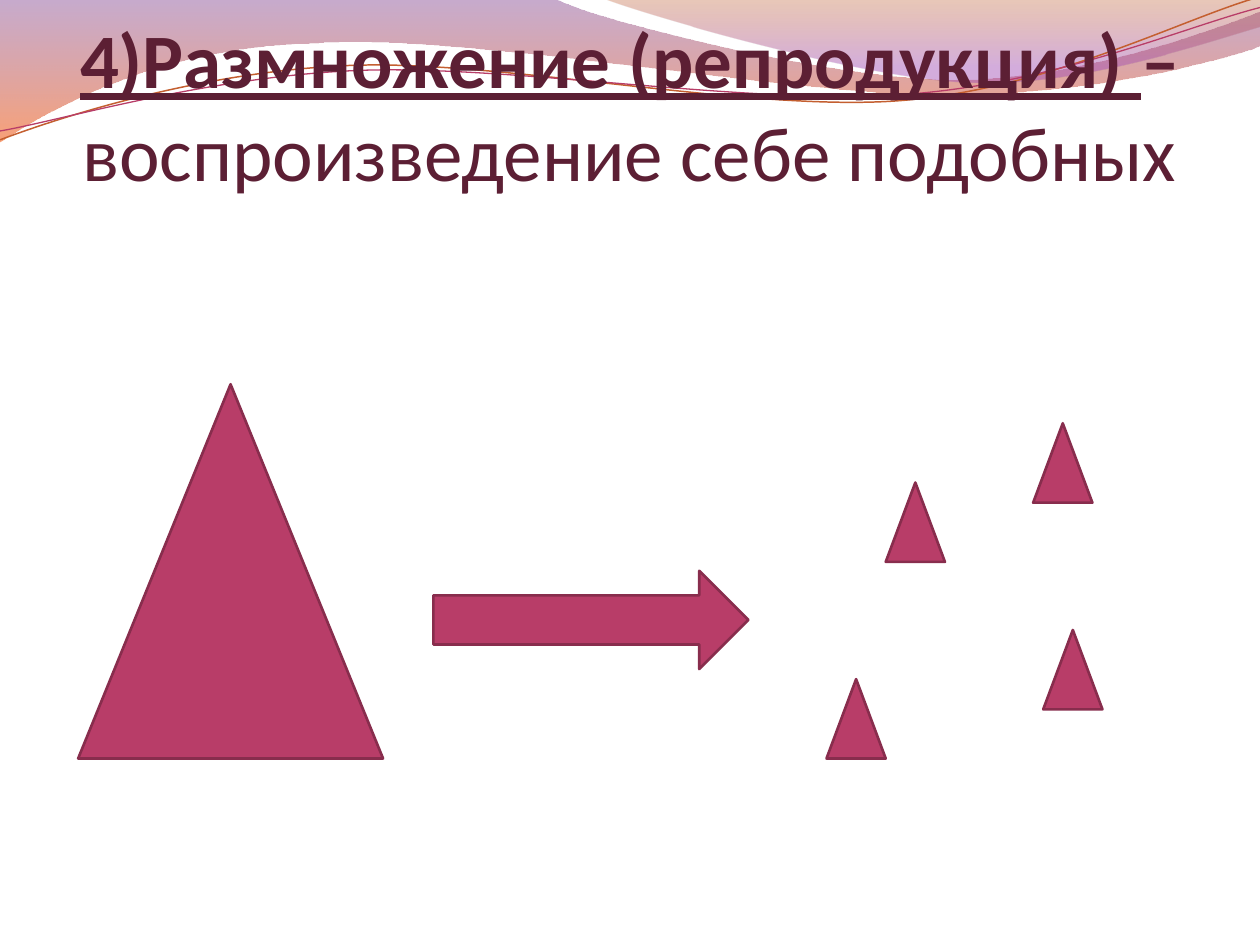
"""Build a slide on reproduction: one large triangle yields four small ones."""
from math import cos, radians, sin

from lxml import etree
from pptx import Presentation
from pptx.dml.color import RGBColor
from pptx.enum.shapes import MSO_SHAPE
from pptx.enum.text import MSO_ANCHOR, PP_ALIGN
from pptx.oxml.ns import qn
from pptx.util import Inches, Pt

TRI, ARROW = MSO_SHAPE.ISOSCELES_TRIANGLE, MSO_SHAPE.RIGHT_ARROW
BOTTOM, CENTER = MSO_ANCHOR.BOTTOM, PP_ALIGN.CENTER

COLORS = {
    "title": "5C1F34", "fill": "B83D68", "edge": "882D4D", "purple": "834591",
    "orange": "F35307", "rust": "B74915", "violet": "A14BB4", "copper": "C45F30",
}
TITLE = [
    ("4)Размножение (репродукция) ", True, True),
    ("–", True, False),
    (" воспроизведение себе подобных", False, False),
]
BANDS = [
    ([(0, 0), (4.4, -0.01),
      (4.76, 0.17, 6.64, 0.63, 7.58, 0.63), (8.53, 0.63, 9.58, 0.26, 10, 0.09),
      (10.01, 0.36),
      (9.83, 0.44, 8.7, 0.76, 7.46, 0.75), (6.22, 0.75, 3.82, 0.28, 2.57, 0.34),
      (1.29, 0.36, 0.46, 0.83, -0.01, 1.13), (0, 0)],
     [(0, "purple", 45), (1, "orange", 55)]),
    ([(4.79, -0.01),
      (5.09, 0.11, 6.82, 0.62, 7.69, 0.65), (8.56, 0.69, 9.61, 0.32, 10, 0.21),
      (10, 0), (4.79, -0.01)],
     [(0, "rust", 30), (0.8, "violet", 45)]),
]
WAVES = [
    ([(0, 1.11), (0.48, 0.93, 1.58, 0.57, 2.77, 0.52),
      (3.95, 0.47, 5.93, 0.89, 7.13, 0.8), (8.33, 0.71, 9.38, 0.15, 9.98, -0.02)],
     "copper", 0.85, (4.99, 0.58)),
    ([(0, 1.04), (0.47, 0.96, 1.64, 0.61, 2.83, 0.56),
      (4.03, 0.51, 5.97, 0.84, 7.17, 0.75), (8.36, 0.67, 9.41, 0.21, 10, 0.06)],
     "fill", 0.75, (5, 0.59)),
]
TILT = 2.7
PARENT = (0.62, 3.05, 2.42, 2.97)
POINTER = (3.44, 4.53, 2.5, 0.78)
YOUNG = [(7.03, 3.83), (6.56, 5.39), (8.28, 5), (8.2, 3.36)]
SMALL = (0.47, 0.63)


def color(name):
    return RGBColor.from_string(COLORS[name])


def pairs(part):
    return list(zip(part[::2], part[1::2]))


def level(part, mid):
    turn, flat = radians(TILT), []
    for x, y in pairs(part):
        dx, dy = x - mid[0], y - mid[1]
        flat += [mid[0] + dx * cos(turn) - dy * sin(turn),
                 mid[1] + dx * sin(turn) + dy * cos(turn)]
    return flat


def draw(shapes, parts, close):
    ends = [tuple(map(Inches, part[-2:])) for part in parts]
    pen = shapes.build_freeform(*ends[0])
    pen.add_line_segments(ends[1:], close=False)
    shape = pen.convert_to_shape()
    shape.shadow.inherit = False
    route = next(shape._element.iter(qn("a:path")))
    for node, part in zip(list(route)[1:], parts[1:]):
        if len(part) == 6:
            curve = etree.SubElement(route, qn("a:cubicBezTo"))
            for x, y in pairs(part):
                point = etree.SubElement(curve, qn("a:pt"))
                point.set("x", str(Inches(x) - shape.left))
                point.set("y", str(Inches(y) - shape.top))
            route.replace(node, curve)
    if close:
        etree.SubElement(route, qn("a:close"))
    return shape


def add_band(shapes, parts, stops):
    shape = draw(shapes, parts, True)
    shape.line.fill.background()
    shape.fill.gradient()
    shape.fill.gradient_angle = 270
    for stop, (place, name, _) in zip(shape.fill.gradient_stops, stops):
        stop.position = place
        stop.color.rgb = color(name)
    for node, (_, _, alpha) in zip(shape._element.iter(qn("a:srgbClr")), stops):
        etree.SubElement(node, qn("a:alpha")).set("val", str(alpha * 1000))


def add_wave(shapes, parts, name, width, mid):
    shape = draw(shapes, [level(part, mid) for part in parts], False)
    shape.rotation = 360 - TILT
    shape.fill.background()
    shape.line.color.rgb = color(name)
    shape.line.width = Pt(width)


def add_title(shapes):
    frame = shapes.add_textbox(0, 0, Inches(10), Inches(1.56)).text_frame
    frame.word_wrap = True
    frame.vertical_anchor = BOTTOM
    frame.margin_left = frame.margin_right = frame.margin_bottom = 0
    frame.margin_top = Inches(0.05)
    para = frame.paragraphs[0]
    para.alignment = CENTER
    para.font.name = "Calibri"
    para.font.size = Pt(44)
    para.font.color.rgb = color("title")
    for text, bold, under in TITLE:
        run = para.add_run()
        run.text = text
        run.font.bold = bold
        run.font.underline = under


def add_figure(shapes, kind, box):
    shape = shapes.add_shape(kind, *map(Inches, box))
    shape.shadow.inherit = False
    shape.fill.solid()
    shape.fill.fore_color.rgb = color("fill")
    shape.line.color.rgb = color("edge")
    shape.line.width = Pt(1.5)


def main():
    deck = Presentation()
    deck.slide_width, deck.slide_height = Inches(10), Inches(7.5)
    shapes = deck.slides.add_slide(deck.slide_layouts[6]).shapes
    for band in BANDS:
        add_band(shapes, *band)
    for wave in WAVES:
        add_wave(shapes, *wave)
    add_title(shapes)
    add_figure(shapes, TRI, PARENT)
    add_figure(shapes, ARROW, POINTER)
    for spot in YOUNG:
        add_figure(shapes, TRI, spot + SMALL)
    deck.save("out.pptx")


if __name__ == "__main__":
    main()
